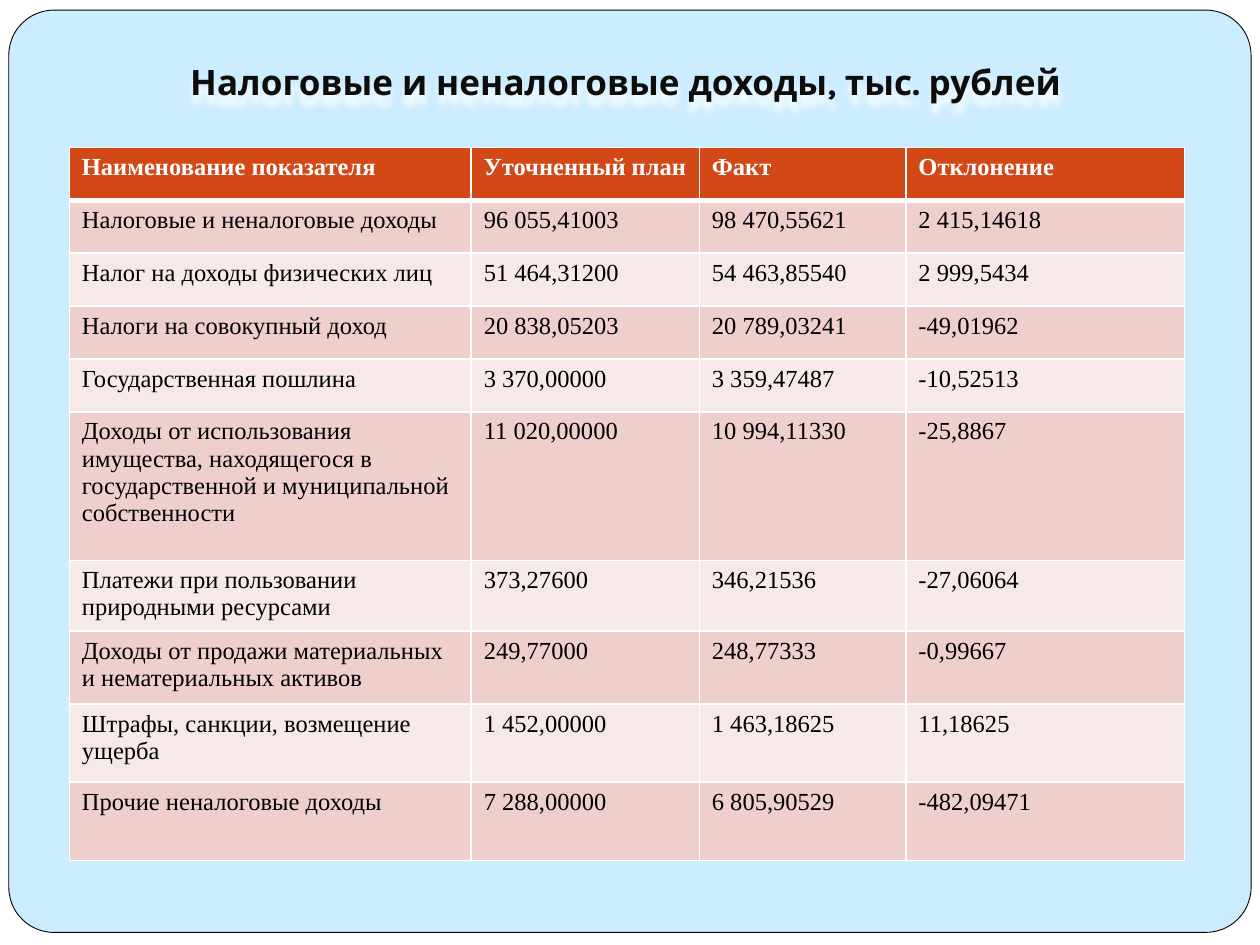
from lxml import etree
from pptx import Presentation
from pptx.dml.color import RGBColor
from pptx.enum.shapes import MSO_SHAPE
from pptx.enum.text import MSO_ANCHOR, MSO_AUTO_SIZE, PP_ALIGN
from pptx.oxml.ns import qn
from pptx.util import Inches, Pt

ROUNDED = MSO_SHAPE.ROUNDED_RECTANGLE
MIDDLE = MSO_ANCHOR.MIDDLE
CENTER = PP_ALIGN.CENTER
NO_AUTOFIT = MSO_AUTO_SIZE.NONE

WHITE = RGBColor(0xFF, 0xFF, 0xFF)
BLACK = RGBColor(0x00, 0x00, 0x00)
TITLE_COLOR = RGBColor(0x0D, 0x0D, 0x0D)
PANEL_BLUE = RGBColor(0xCC, 0xEC, 0xFF)
HEADER_ORANGE = RGBColor(0xD3, 0x48, 0x17)
BANDS = (RGBColor(0xEF, 0xCF, 0xCC), RGBColor(0xF7, 0xE9, 0xE8))

TITLE_FONT = "Karla"
TABLE_FONT = "Times New Roman"

COLUMN_WIDTHS = (3.19, 1.81, 1.64, 2.21)
ROW_HEIGHTS = (0.42,) * 5 + (1.18, 0.56, 0.58, 0.62, 0.62)
ROWS = (
    ("Наименование показателя", "Уточненный план", "Факт", "Отклонение"),
    ("Налоговые и неналоговые доходы", "96 055,41003", "98 470,55621", "2 415,14618"),
    ("Налог на доходы физических лиц", "51 464,31200", "54 463,85540", "2 999,5434"),
    ("Налоги на совокупный доход", "20 838,05203", "20 789,03241", "-49,01962"),
    ("Государственная пошлина", "3 370,00000", "3 359,47487", "-10,52513"),
    ("Доходы от использования имущества, находящегося в государственной и "
     "муниципальной собственности", "11 020,00000", "10 994,11330", "-25,8867"),
    ("Платежи при пользовании природными ресурсами",
     "373,27600", "346,21536", "-27,06064"),
    ("Доходы от продажи материальных и нематериальных активов",
     "249,77000", "248,77333", "-0,99667"),
    ("Штрафы, санкции, возмещение ущерба",
     "1 452,00000", "1 463,18625", "11,18625"),
    ("Прочие неналоговые доходы", "7 288,00000", "6 805,90529", "-482,09471"),
)


def add_run(paragraph, text, font_name, size, color, bold):
    run = paragraph.add_run()
    run.text = text
    font = run.font
    font.name, font.size, font.bold = font_name, Pt(size), bold
    font.color.rgb = color


def add_color(parent, color):
    fill = etree.SubElement(parent, qn("a:solidFill"))
    etree.SubElement(fill, qn("a:srgbClr"), val=str(color))


def add_panel(slide):
    panel = slide.shapes.add_shape(
        ROUNDED, Inches(0.07), Inches(0.08), Inches(9.86), Inches(7.32))
    panel.adjustments[0] = 0.049
    panel.shadow.inherit = False
    panel.fill.solid()
    panel.fill.fore_color.rgb = PANEL_BLUE
    panel.line.color.rgb = BLACK
    panel.line.width = Pt(0.5)
    # Send the panel behind the title placeholder
    slide.shapes._spTree.insert(2, panel._element)


def add_white_shadow(shape):
    effects = etree.SubElement(shape._element.spPr, qn("a:effectLst"))
    shadow = etree.SubElement(
        effects, qn("a:outerShdw"), blurRad=str(Pt(4)), dist=str(Pt(5)),
        dir="5400000", algn="t", rotWithShape="0")
    etree.SubElement(shadow, qn("a:srgbClr"), val=str(WHITE))


def set_title(slide, text):
    title = slide.shapes.title
    title.left, title.top = Inches(0.75), Inches(0.43)
    title.width, title.height = Inches(8.43), Inches(0.44)
    title.fill.background()
    add_white_shadow(title)
    frame = title.text_frame
    frame.word_wrap = True
    frame.auto_size = NO_AUTOFIT
    frame.vertical_anchor = MIDDLE
    paragraph = frame.paragraphs[0]
    paragraph.alignment = CENTER
    add_run(paragraph, text, TITLE_FONT, 20, TITLE_COLOR, True)


def set_borders(cell, top, bottom):
    properties = cell._tc.get_or_add_tcPr()
    widths = {"a:lnL": 1, "a:lnR": 1, "a:lnT": top, "a:lnB": bottom}
    for tag, width in widths.items():
        line = etree.SubElement(properties, qn(tag), w=str(Pt(width)))
        add_color(line, WHITE)


def add_income_table(slide):
    table = slide.shapes.add_table(
        len(ROWS), len(COLUMN_WIDTHS), Inches(0.55), Inches(1.17),
        Inches(sum(COLUMN_WIDTHS)), Inches(sum(ROW_HEIGHTS))).table
    for column, width in zip(table.columns, COLUMN_WIDTHS):
        column.width = Inches(width)
    for index, (row, height, values) in enumerate(
            zip(table.rows, ROW_HEIGHTS, ROWS)):
        row.height = Inches(height)
        is_header = index == 0
        fill_color = HEADER_ORANGE if is_header else BANDS[(index - 1) % 2]
        text_color = WHITE if is_header else BLACK
        for cell, value in zip(row.cells, values):
            # A thick rule separates the header from the body
            set_borders(cell, top=3 if index == 1 else 1,
                        bottom=3 if is_header else 1)
            cell.fill.solid()
            cell.fill.fore_color.rgb = fill_color
            add_run(cell.text_frame.paragraphs[0], value, TABLE_FONT, 14,
                    text_color, is_header)


def main():
    presentation = Presentation()
    presentation.slide_width = Inches(10)
    presentation.slide_height = Inches(7.5)
    slide = presentation.slides.add_slide(presentation.slide_layouts[5])

    # Backdrop
    slide.background.fill.solid()
    slide.background.fill.fore_color.rgb = WHITE
    add_panel(slide)

    # Content
    set_title(slide, "Налоговые и неналоговые доходы, тыс. рублей")
    add_income_table(slide)
    presentation.save("out.pptx")


if __name__ == "__main__":
    main()
